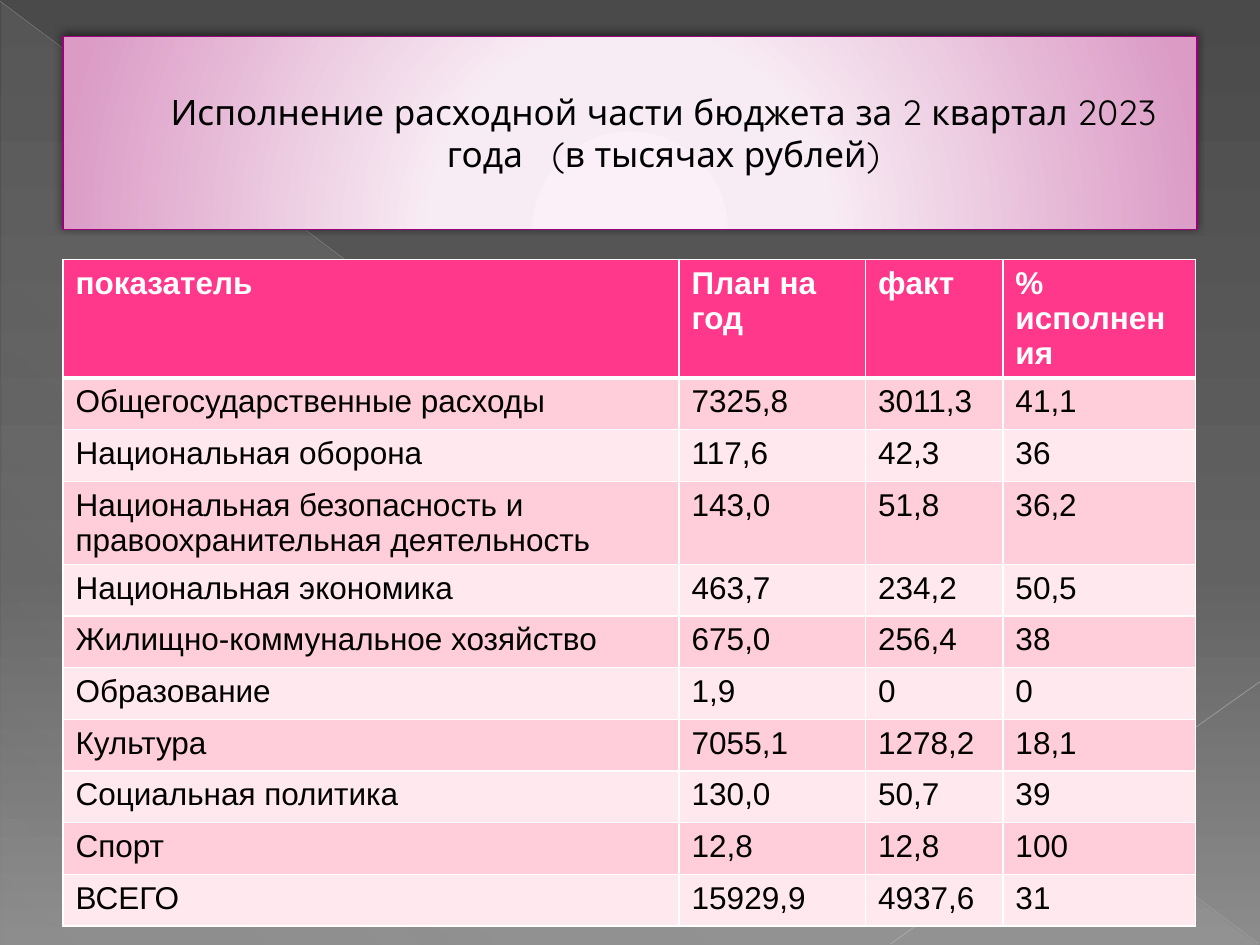
from lxml.etree import SubElement
from pptx import Presentation
from pptx.dml.color import RGBColor
from pptx.enum.shapes import MSO_CONNECTOR, MSO_SHAPE
from pptx.enum.text import MSO_ANCHOR, MSO_AUTO_SIZE, PP_ALIGN
from pptx.oxml.ns import qn
from pptx.util import Inches, Pt

TITLE = "Исполнение расходной части бюджета за 2 квартал 2023 года\u00a0\u00a0 (в тысячах рублей)"
HEADER = ("показатель", "План на год", "факт", "% исполнения")
ROWS = [
    ("Общегосударственные расходы", "7325,8", "3011,3", "41,1"),
    ("Национальная оборона", "117,6", "42,3", "36"),
    ("Национальная безопасность и правоохранительная деятельность", "143,0", "51,8", "36,2"),
    ("Национальная экономика", "463,7", "234,2", "50,5"),
    ("Жилищно-коммунальное хозяйство", "675,0", "256,4", "38"),
    ("Образование", "1,9", "0", "0"),
    ("Культура", "7055,1", "1278,2", "18,1"),
    ("Социальная политика", "130,0", "50,7", "39"),
    ("Спорт", "12,8", "12,8", "100"),
    ("ВСЕГО", "15929,9", "4937,6", "31"),
]
COL_WIDTHS = (4.89, 1.48, 1.09, 1.53)
ROW_HEIGHT = 0.41
LEFT, WIDTH = 0.5, 9

BLACK = RGBColor(0x00, 0x00, 0x00)
WHITE = RGBColor(0xFF, 0xFF, 0xFF)
PINK = RGBColor(0xFF, 0x38, 0x8C)
BANDS = (RGBColor(0xFF, 0xCE, 0xDA), RGBColor(0xFF, 0xE8, 0xEE))
PURPLE = RGBColor(0x9C, 0x00, 0x7F)
OUTLINE = RGBColor(0xB1, 0x27, 0x61)
SHEEN = RGBColor(0xD2, 0xD2, 0xD2)

BACKDROP = [(0, RGBColor(0x4A, 0x4A, 0x4A), 100), (60, RGBColor(0x62, 0x62, 0x62), 100),
            (100, RGBColor(0x8C, 0x8C, 0x8C), 100)]
SHEEN_STOPS = [(0, SHEEN, 10), (70, SHEEN, 8), (100, SHEEN, 1)]
TITLE_STOPS = [(0, RGBColor(0xFB, 0xF0, 0xF7), 100), (34, RGBColor(0xF8, 0xEC, 0xF4), 100),
               (100, RGBColor(0xDB, 0x9B, 0xC5), 100)]
RAYS = [
    ((0, 0.01), (9.99, 7.49), RGBColor(0xBF, 0xBF, 0xBF), 0.39, 35),
    ((10, 5.41), (7.07, 7.49), RGBColor(0xC6, 0xC6, 0xC6), 0.47, 45),
]


def add(parent, tag, **attrs):
    return SubElement(parent, qn(tag), {k: str(v) for k, v in attrs.items()})


def add_color(parent, color, alpha=100):
    clr = add(parent, "a:srgbClr", val=color)
    if alpha < 100:
        add(clr, "a:alpha", val=alpha * 1000)


def set_gradient(props, stops, angle=None, focus=None):
    solid = props.find(qn("a:solidFill"))
    grad = add(props, "a:gradFill", rotWithShape=1)
    props.replace(solid, grad)
    gs_list = add(grad, "a:gsLst")
    for pos, color, alpha in stops:
        add_color(add(gs_list, "a:gs", pos=pos * 1000), color, alpha)
    if focus:
        path = add(grad, "a:path", path="circle")
        add(path, "a:fillToRect", **{side: v * 1000 for side, v in zip("ltrb", focus)})
    else:
        add(grad, "a:lin", ang=angle * 60000, scaled=0)


def set_format(target, **values):
    for name, value in values.items():
        setattr(target, name, value)


def set_borders(cell, bottom):
    tc_pr = cell._tc.get_or_add_tcPr()
    for i, (side, width) in enumerate((("L", 1), ("R", 1), ("T", 1), ("B", bottom))):
        ln = add(tc_pr, f"a:ln{side}", w=Pt(width))
        add_color(add(ln, "a:solidFill"), WHITE)
        tc_pr.insert(i, ln)


def add_backdrop(s):
    s.background.fill.solid()
    set_gradient(s.element.find(".//" + qn("p:bgPr")), BACKDROP, angle=90)
    sheen = s.shapes.add_shape(MSO_SHAPE.RIGHT_TRIANGLE, *map(Inches, (0.01, 0.02, 9.98, 7.48)))
    sheen.shadow.inherit = False
    sheen.line.fill.background()
    sheen.fill.solid()
    set_gradient(sheen.element.spPr, SHEEN_STOPS, angle=133)
    for start, end, color, width, alpha in RAYS:
        ray = s.shapes.add_connector(MSO_CONNECTOR.STRAIGHT, *map(Inches, start + end))
        set_format(ray.line, width=Pt(width))
        ray.line.color.rgb = color
        clr = ray.element.spPr.find(".//" + qn("a:srgbClr"))
        add(clr, "a:alpha", val=alpha * 1000)
        add(ray.element.spPr, "a:effectLst")


def add_title(s):
    sp = s.shapes.title
    s.shapes.element.append(sp.element)
    set_format(sp, left=Inches(LEFT), top=Inches(0.29), width=Inches(WIDTH), height=Inches(1.53))
    sp.fill.solid()
    set_gradient(sp.element.spPr, TITLE_STOPS, focus=(50, 155, 50, -55))
    sp.line.color.rgb = PURPLE
    sp.line.width = Pt(0.75)
    shadow = add(add(sp.element.spPr, "a:effectLst"), "a:outerShdw", blurRad=Pt(5),
                 dist=Pt(2), dir=245 * 60000, rotWithShape=0)
    add_color(shadow, BLACK, 50)
    tf = sp.text_frame
    set_format(tf, auto_size=MSO_AUTO_SIZE.NONE, word_wrap=True, vertical_anchor=MSO_ANCHOR.MIDDLE)
    p = tf.paragraphs[0]
    p.alignment = PP_ALIGN.CENTER
    p_pr = p._p.get_or_add_pPr()
    p_pr.set("marL", str(Inches(0.53)))
    p_pr.set("indent", "0")
    r = p.add_run()
    r.text = TITLE
    set_format(r.font, size=Pt(20), name="Quicksand")
    r.font.color.rgb = BLACK
    ln = add(r._r.get_or_add_rPr(), "a:ln", w=Pt(0.5))
    add_color(add(ln, "a:solidFill"), OUTLINE)
    r._r.get_or_add_rPr().insert(0, ln)


def add_budget_table(s):
    data = [HEADER] + ROWS
    frame = s.shapes.add_table(len(data), len(HEADER), Inches(LEFT), Inches(2.06),
                               Inches(WIDTH), Inches(ROW_HEIGHT * len(data)))
    table = frame.table
    for col, width in zip(table.columns, COL_WIDTHS):
        col.width = Inches(width)
    for i, values in enumerate(data):
        head = i == 0
        table.rows[i].height = Inches(ROW_HEIGHT)
        for j, value in enumerate(values):
            cell = table.cell(i, j)
            cell.fill.solid()
            cell.fill.fore_color.rgb = PINK if head else BANDS[(i - 1) % 2]
            set_borders(cell, 3 if head else 1)
            r = cell.text_frame.paragraphs[0].add_run()
            r.text = value
            set_format(r.font, size=Pt(18), name="Arial", bold=head)
            r.font.color.rgb = WHITE if head else BLACK


def main():
    prs = Presentation()
    set_format(prs, slide_width=Inches(10), slide_height=Inches(7.5))
    s = prs.slides.add_slide(prs.slide_layouts[5])
    add_backdrop(s)
    add_title(s)
    add_budget_table(s)
    prs.save("out.pptx")


if __name__ == "__main__":
    main()
